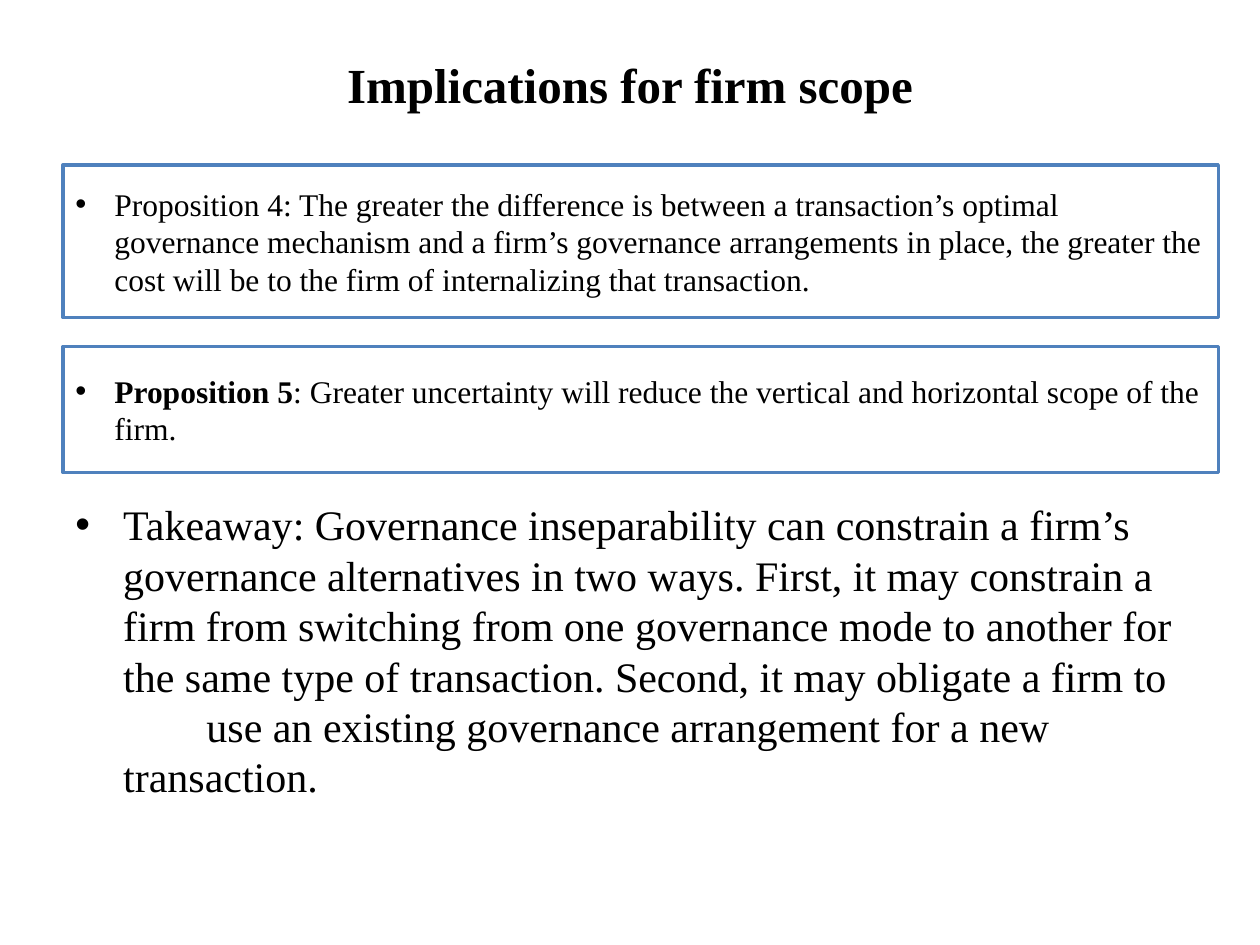
from dataclasses import dataclass

from lxml import etree
from pptx import Presentation
from pptx.dml.color import RGBColor
from pptx.enum import shapes, text
from pptx.oxml.ns import qn
from pptx.util import Inches, Pt


@dataclass(frozen=True)
class Theme:
    font: str = "Times New Roman"
    ink: RGBColor = RGBColor(0, 0, 0)
    paper: RGBColor = RGBColor(255, 255, 255)
    edge: RGBColor = RGBColor(0x4F, 0x81, 0xBD)
    title: int = 28
    body: int = 24
    note: int = 18


THEME = Theme()


def add_run(para, words, size, bold=False):
    run = para.add_run()
    run.text = words
    font = run.font
    font.name, font.size, font.bold = THEME.font, Pt(size), bold
    font.color.rgb = THEME.ink


def set_bullet(para, indent, tab=None):
    props = para._p.get_or_add_pPr()
    props.set("marL", str(Inches(indent)))
    props.set("indent", str(-Inches(indent)))
    etree.SubElement(props, qn("a:buFont")).set("typeface", "Arial")
    etree.SubElement(props, qn("a:buChar")).set("char", "•")
    if tab:
        tabs = etree.SubElement(props, qn("a:tabLst"))
        stop = etree.SubElement(tabs, qn("a:tab"))
        stop.set("pos", str(Inches(tab)))
        stop.set("algn", "l")


def set_title(slide, box, words):
    title = slide.shapes.title
    title.left, title.top, title.width, title.height = map(Inches, box)
    frame = title.text_frame
    frame.vertical_anchor = text.MSO_ANCHOR.MIDDLE
    para = frame.paragraphs[0]
    para.alignment = text.PP_ALIGN.CENTER
    add_run(para, words, THEME.title, True)


def add_claim(slide, box, runs):
    """Place a framed proposition; runs are (words, bold) pairs."""
    card = slide.shapes.add_shape(shapes.MSO_SHAPE.RECTANGLE, *map(Inches, box))
    card.shadow.inherit = False
    card.fill.solid()
    card.fill.fore_color.rgb = THEME.paper
    card.line.color.rgb = THEME.edge
    card.line.width = Pt(2)
    frame = card.text_frame
    frame.word_wrap = True
    frame.vertical_anchor = text.MSO_ANCHOR.MIDDLE
    para = frame.paragraphs[0]
    para.alignment = text.PP_ALIGN.LEFT
    set_bullet(para, 0.31)
    for words, bold in runs:
        add_run(para, words, THEME.note, bold)


def add_lesson(slide, box, lead, rest):
    """Place the takeaway, whose second part starts at a tab on a new line."""
    frame = slide.shapes.add_textbox(*map(Inches, box)).text_frame
    frame.word_wrap = True
    frame.margin_right = Inches(0.2)
    para = frame.paragraphs[0]
    set_bullet(para, 0.38, tab=1.04)
    add_run(para, lead, THEME.body)
    para.add_line_break()
    add_run(para, "\t" + rest, THEME.body)


def main():
    deck = Presentation()
    deck.slide_width, deck.slide_height = Inches(10), Inches(7.5)
    slide = deck.slides.add_slide(deck.slide_layouts[5])

    set_title(slide, (0, 0.25, 10, 0.83), "Implications for firm scope")

    # Takeaway
    left = 0.5
    add_lesson(
        slide, (left, 3.91, 9.43, 2.34),
        "Takeaway: Governance inseparability can constrain a firm’s governance "
        "alternatives in two ways. First, it may constrain a firm from switching "
        "from one governance mode to another for the same type of transaction. "
        "Second, it may obligate a firm to",
        "use an existing governance arrangement for a new transaction.")

    # Framed propositions
    wide = 9.17
    add_claim(slide, (left, 1.31, wide, 1.21), [
        ("Proposition 4: The greater the difference is between a transaction’s "
         "optimal governance mechanism and a firm’s governance arrangements in "
         "place, the greater the cost will be to the firm of internalizing that "
         "transaction.", False)])
    add_claim(slide, (left, 2.75, wide, 1), [
        ("Proposition 5", True),
        (": Greater uncertainty will reduce the vertical and horizontal scope "
         "of the firm.", False)])

    deck.save("out.pptx")


if __name__ == "__main__":
    main()
